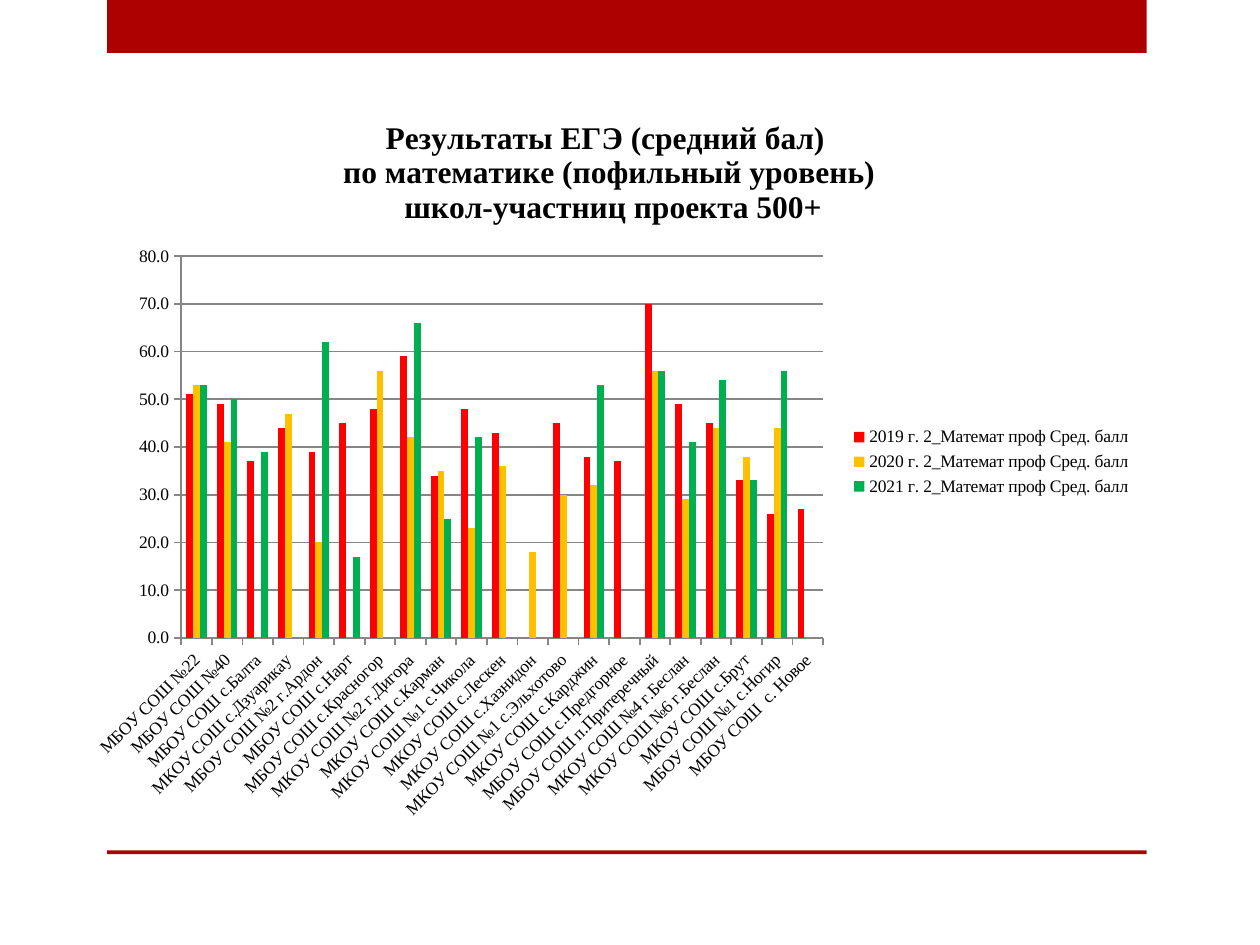
"""Build a slide with a column chart of average exam scores by school."""
import pptx
import pptx.chart.data
import pptx.dml.color
import pptx.enum.chart
import pptx.enum.shapes
import pptx.enum.text
import pptx.oxml
import pptx.oxml.ns
import pptx.util

Inches = pptx.util.Inches
COLORS = {"band": "AD0101", "text": "000000", "grid": "868686",
          "2019": "FF0000", "2020": "FFC000", "2021": "00B050"}
FONT = "Times New Roman"


def rgb(name):
    return pptx.dml.color.RGBColor.from_string(COLORS[name])


def write_line(paragraph, text, size=18, bold=True, color="text"):
    paragraph.alignment = pptx.enum.text.PP_ALIGN.CENTER
    run = paragraph.add_run()
    run.text = text
    run.font.name = FONT
    run.font.size = pptx.util.Pt(size)
    run.font.bold = bold
    run.font.color.rgb = rgb(color)


presentation = pptx.Presentation()
presentation.slide_width = Inches(10)
presentation.slide_height = Inches(7.5)
slide = presentation.slides.add_slide(presentation.slide_layouts[6])

for top, height in ((0, 0.42), (6.75, 0.03)):
    band = slide.shapes.add_shape(
        pptx.enum.shapes.MSO_SHAPE.RECTANGLE,
        Inches(0.85), Inches(top), Inches(8.25), Inches(height))
    band.shadow.inherit = False
    band.fill.solid()
    band.fill.fore_color.rgb = rgb("band")
    band.line.fill.background()

scores = [
    ("МБОУ СОШ №22", 51, 53, 53),
    ("МБОУ СОШ №40", 49, 41, 50),
    ("МБОУ СОШ с.Балта", 37, 0, 39),
    ("МКОУ СОШ с.Дзуарикау", 44, 47, 0),
    ("МБОУ СОШ №2 г.Ардон", 39, 20, 62),
    ("МБОУ СОШ с.Нарт", 45, 0, 17),
    ("МБОУ СОШ с.Красногор", 48, 56, 0),
    ("МКОУ СОШ №2 г.Дигора", 59, 42, 66),
    ("МКОУ СОШ с.Карман", 34, 35, 25),
    ("МКОУ СОШ №1 с.Чикола", 48, 23, 42),
    ("МКОУ СОШ с.Лескен", 43, 36, 0),
    ("МКОУ СОШ с.Хазнидон", 0, 18, 0),
    ("МКОУ СОШ №1 с.Эльхотово", 45, 30, 0),
    ("МКОУ СОШ с.Карджин", 38, 32, 53),
    ("МБОУ СОШ с.Предгорное", 37, 0, 0),
    ("МБОУ СОШ п.Притеречный", 70, 56, 56),
    ("МКОУ СОШ №4 г.Беслан", 49, 29, 41),
    ("МКОУ СОШ №6 г.Беслан", 45, 44, 54),
    ("МКОУ СОШ с.Брут", 33, 38, 33),
    ("МБОУ СОШ №1 с.Ногир", 26, 44, 56),
    ("МБОУ СОШ  с. Новое", 27, 0, 0),
]
years = ("2019", "2020", "2021")
schools, *year_scores = zip(*scores)
chart_data = pptx.chart.data.CategoryChartData(number_format="0.0")
chart_data.categories = schools
for year, values in zip(years, year_scores):
    chart_data.add_series(f"{year} г. 2_Математ проф Сред. балл", values)

chart = slide.shapes.add_chart(
    pptx.enum.chart.XL_CHART_TYPE.COLUMN_CLUSTERED,
    Inches(0.59), Inches(0.75), Inches(8.49), Inches(5.83), chart_data).chart
chart.font.name = FONT
chart.font.size = pptx.util.Pt(10)
chart.font.color.rgb = rgb("text")

title_frame = chart.chart_title.text_frame
title_lines = ("Результаты ЕГЭ (средний бал) ",
               "по математике (пофильный уровень)",
               " школ-участниц проекта 500+")
for index, line in enumerate(title_lines):
    paragraph = title_frame.add_paragraph() if index else title_frame.paragraphs[0]
    write_line(paragraph, line)
chart.chart_title.include_in_layout = False

chart.has_legend = True
chart.legend.position = pptx.enum.chart.XL_LEGEND_POSITION.RIGHT
chart.legend.include_in_layout = False

plot = chart.plots[0]
plot.gap_width = 150
plot.overlap = 0
plot.vary_by_categories = False
for series, year in zip(plot.series, years):
    series.format.fill.solid()
    series.format.fill.fore_color.rgb = rgb(year)
    series.invert_if_negative = False

value_axis = chart.value_axis
value_axis.minimum_scale = 0
value_axis.maximum_scale = 80
value_axis.major_unit = 10
value_axis.has_major_gridlines = True
value_axis.tick_labels.number_format = "0.0"
value_axis.tick_labels.number_format_is_linked = False
category_axis = chart.category_axis
for axis in (value_axis, category_axis):
    axis.major_tick_mark = pptx.enum.chart.XL_TICK_MARK.OUTSIDE
    axis.tick_labels.font.size = pptx.util.Pt(10)
for part in (value_axis, category_axis, value_axis.major_gridlines):
    part.format.line.color.rgb = rgb("grid")
    part.format.line.width = pptx.util.Pt(1)

label_body = category_axis._element.find(
    f"{pptx.oxml.ns.qn('c:txPr')}/{pptx.oxml.ns.qn('a:bodyPr')}")
label_body.set("rot", "-2700000")
label_body.set("vert", "horz")

plot_area = chart._chartSpace.chart.plotArea
for layout in plot_area.findall(pptx.oxml.ns.qn("c:layout")):
    plot_area.remove(layout)
plot_area.insert(0, pptx.oxml.parse_xml(
    f"<c:layout {pptx.oxml.ns.nsdecls('c')}><c:manualLayout>"
    '<c:layoutTarget val="inner"/><c:xMode val="edge"/><c:yMode val="edge"/>'
    '<c:x val="0.1"/><c:y val="0.22"/><c:w val="0.6"/><c:h val="0.52"/>'
    "</c:manualLayout></c:layout>"))

presentation.save("out.pptx")
